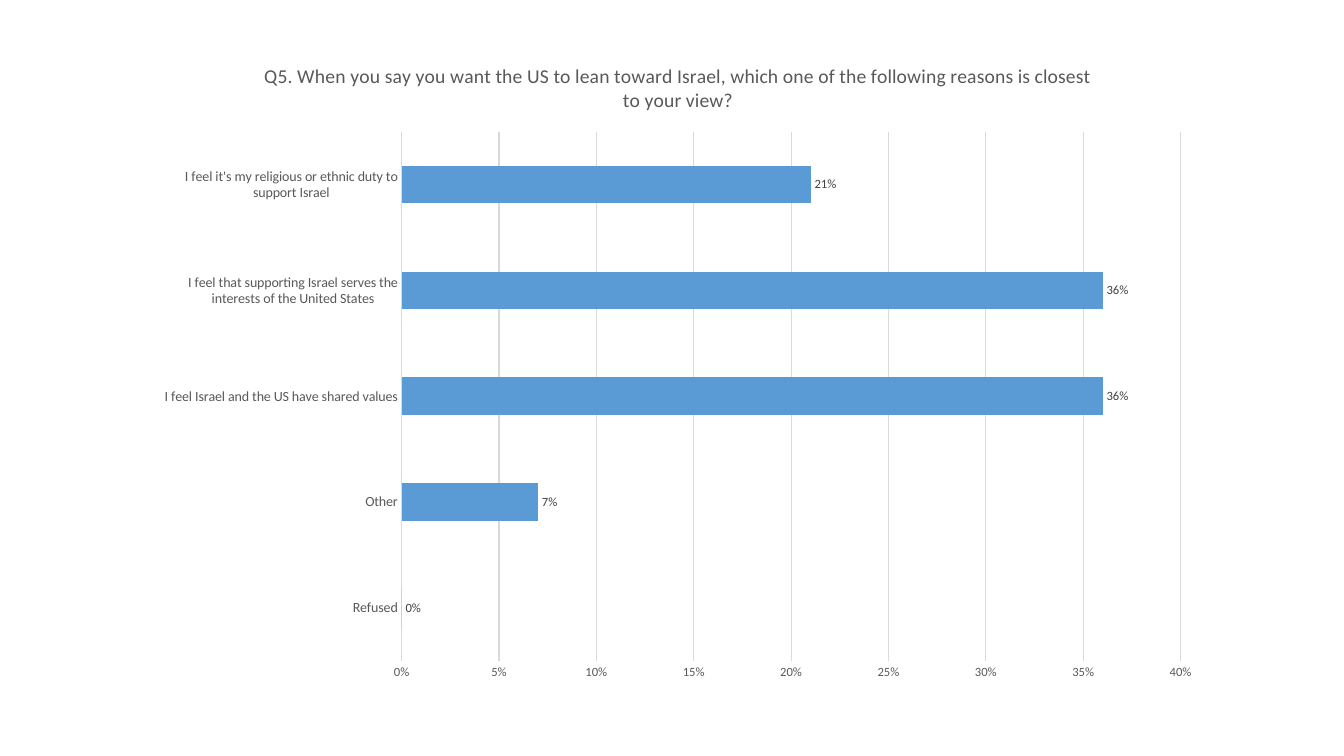
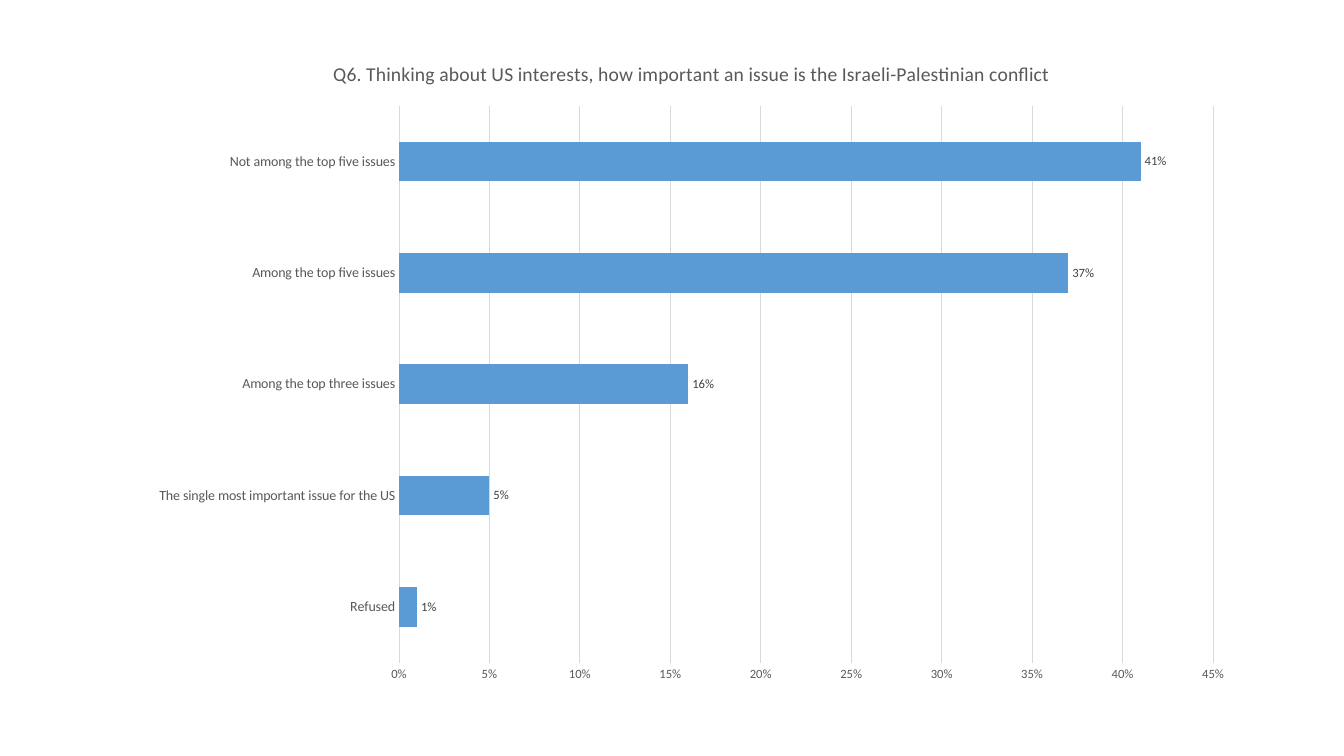
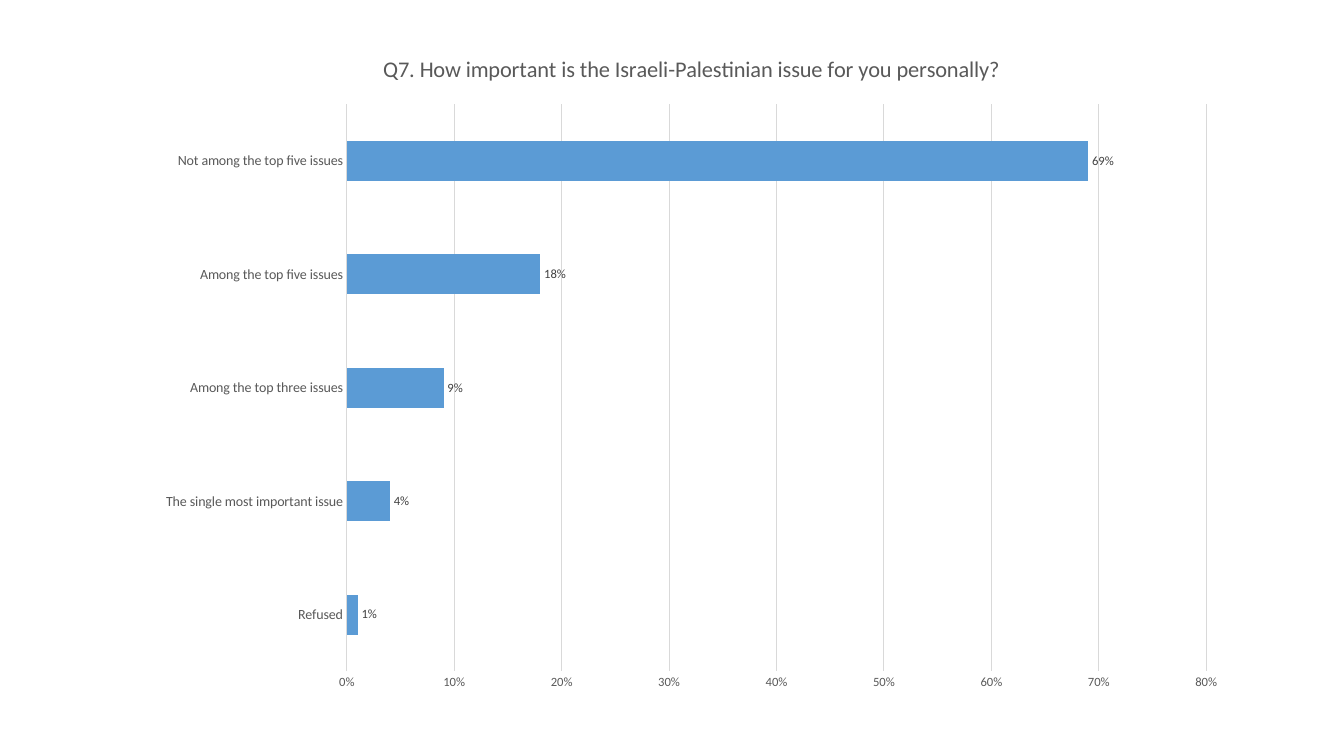
import dataclasses

import pptx
import pptx.chart.data
import pptx.dml.color
import pptx.enum.chart
import pptx.util
from pptx.util import Inches


@dataclasses.dataclass(frozen=True)
class Theme:
    font: str = "Calibri"
    bar: str = "5B9BD5"
    grid: str = "D9D9D9"
    text: str = "595959"
    label: str = "404040"
    base: str = "000000"
    title_size: int = 14
    category_size: int = 10
    value_size: int = 9
    line_width: float = 0.75
    gap_width: int = 182


def rgb(color):
    return pptx.dml.color.RGBColor.from_string(color)


def format_font(font, *, name, size, color):
    font.name = name
    font.size = pptx.util.Pt(size)
    font.color.rgb = rgb(color)
    font.bold = False


def write_text(frame, text, **style):
    """Put one formatted run of text in a text frame."""
    span = frame.paragraphs[0].add_run()
    span.text = text
    format_font(span.font, **style)


class SurveyDeck:
    """Holds the presentation, its theme and the current page."""

    def __init__(self, theme):
        self.theme = theme
        self.deck = pptx.Presentation()
        self.deck.slide_width = Inches(13.33)
        self.deck.slide_height = Inches(7.5)
        self.page = None

    def add_page(self):
        self.page = self.deck.slides.add_slide(self.deck.slide_layouts[6])

    def style(self, size, color):
        return {"name": self.theme.font, "size": size, "color": color}

    def draw_line(self, line):
        line.color.rgb = rgb(self.theme.grid)
        line.width = pptx.util.Pt(self.theme.line_width)

    def add_bar_chart(self, box, question, answers, axis_max, axis_step, title_size):
        theme = self.theme
        data = pptx.chart.data.CategoryChartData(number_format="0%")
        data.categories = list(answers)
        data.add_series("Series 1", list(answers.values()))
        chart = self.page.shapes.add_chart(
            pptx.enum.chart.XL_CHART_TYPE.BAR_CLUSTERED,
            *(Inches(length) for length in box), data).chart
        format_font(chart.font, **self.style(theme.category_size, theme.base))
        chart.has_legend = False

        # Question as chart title
        chart.has_title = True
        chart.chart_title.include_in_layout = False
        write_text(chart.chart_title.text_frame, question,
                   **self.style(title_size, theme.text))

        self.format_axes(chart, axis_max, axis_step)
        self.format_bars(chart.plots[0])

    def format_axes(self, chart, axis_max, axis_step):
        theme = self.theme
        sizes = ((chart.category_axis, theme.category_size),
                 (chart.value_axis, theme.value_size))
        for axis, size in sizes:
            axis.major_tick_mark = pptx.enum.chart.XL_TICK_MARK.NONE
            axis.minor_tick_mark = pptx.enum.chart.XL_TICK_MARK.NONE
            format_font(axis.tick_labels.font, **self.style(size, theme.text))
        self.draw_line(chart.category_axis.format.line)

        scale = chart.value_axis
        scale.minimum_scale = 0
        scale.maximum_scale = axis_max
        scale.major_unit = axis_step
        scale.tick_labels.number_format = "0%"
        scale.tick_labels.number_format_is_linked = False
        scale.format.line.fill.background()
        self.draw_line(scale.major_gridlines.format.line)

    def format_bars(self, plot):
        theme = self.theme
        plot.gap_width = theme.gap_width
        plot.vary_by_categories = False
        fill = plot.series[0].format.fill
        fill.solid()
        fill.fore_color.rgb = rgb(theme.bar)
        plot.has_data_labels = True
        labels = plot.data_labels
        labels.show_value = True
        labels.number_format = "0%"
        labels.number_format_is_linked = False
        labels.position = pptx.enum.chart.XL_LABEL_POSITION.OUTSIDE_END
        format_font(labels.font, **self.style(theme.value_size, theme.label))


THEME = Theme()

# Answers run from the bottom bar to the top bar
CHARTS = [
    dict(
        box=(1.42, 0.4, 10.61, 6.47),
        question="Q5. When you say you want the US to lean toward Israel, "
                 "which one of the following reasons is closest to your view?",
        answers={
            "Refused": 0,
            "Other": 0.07,
            "I feel Israel and the US have shared values": 0.36,
            "I feel that supporting Israel serves the interests of the United States": 0.36,
            "I feel it's my religious or ethnic duty to support Israel": 0.21,
        },
        axis_max=0.4, axis_step=0.05, title_size=THEME.title_size,
    ),
    dict(
        box=(1.36, 0.38, 11, 6.51),
        question="Q6. Thinking about US interests, how important an issue is "
                 "the Israeli-Palestinian conflict",
        answers={
            "Refused": 0.01,
            "The single most important issue for the US": 0.05,
            "Among the top three issues": 0.16,
            "Among the top five issues": 0.37,
            "Not among the top five issues": 0.41,
        },
        axis_max=0.45, axis_step=0.05, title_size=THEME.title_size,
    ),
    dict(
        box=(1.43, 0.31, 10.86, 6.67),
        question="Q7. How important is the Israeli-Palestinian issue for you personally?",
        answers={
            "Refused": 0.01,
            "The single most important issue": 0.04,
            "Among the top three issues": 0.09,
            "Among the top five issues": 0.18,
            "Not among the top five issues": 0.69,
        },
        axis_max=0.8, axis_step=0.1, title_size=THEME.title_size + 2,
    ),
]


def main():
    survey = SurveyDeck(THEME)
    for chart in CHARTS:
        survey.add_page()
        survey.add_bar_chart(**chart)
    survey.deck.save("out.pptx")


if __name__ == "__main__":
    main()
